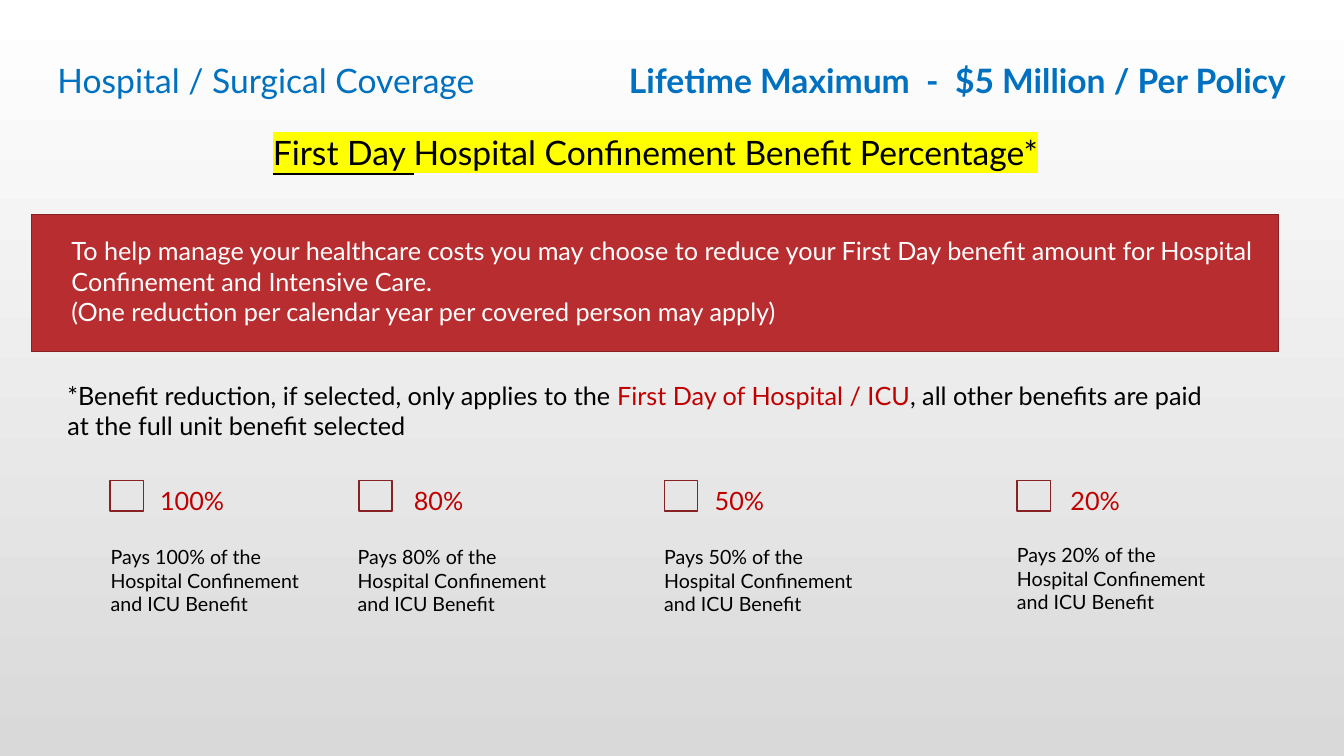
from dataclasses import dataclass
from typing import Any

import lxml.etree
import pptx
import pptx.dml.color
import pptx.enum.shapes
import pptx.enum.text
import pptx.oxml.ns
import pptx.util

RGB = pptx.dml.color.RGBColor.from_string
ALIGN = pptx.enum.text.PP_ALIGN


@dataclass(frozen=True)
class Theme:
    font: str = "Lato"
    heading_size: int = 24
    body_size: int = 18
    caption_size: int = 14
    blue: str = "0070C0"
    black: str = "000000"
    white: str = "FFFFFF"
    red: str = "C00000"
    banner: str = "B82D2F"
    outline: str = "882123"
    marker: str = "FFFF00"
    shade: str = "D9D9D9"


@dataclass(frozen=True)
class Grid:
    width: int = pptx.util.Inches(13.33)
    height: int = pptx.util.Inches(7.5)
    divisions: int = 100

    def columns(self, count: float) -> int:
        return round(self.width * count / self.divisions)

    def rows(self, count: float) -> int:
        return round(self.height * count / self.divisions)


@dataclass(frozen=True)
class Box:
    column: float
    row: float
    columns: float
    rows: float

    def place(self) -> tuple[int, int, int, int]:
        return (GRID.columns(self.column), GRID.rows(self.row),
                GRID.columns(self.columns), GRID.rows(self.rows))


@dataclass(frozen=True)
class Piece:
    text: str
    color: str
    bold: bool = False
    underline: bool = False
    highlight: str = ""


@dataclass(frozen=True)
class TextBlock:
    box: Box
    paragraphs: list[list[Piece]]
    size: int
    alignment: Any = ALIGN.LEFT
    wrap: bool = True
    indent: float = 0
    right_tab: float = 0


@dataclass(frozen=True)
class Option:
    percent: str
    checkbox_column: float
    label_column: float
    label_columns: float
    caption_column: float
    caption_row: float = 71.47


THEME = Theme()
GRID = Grid()
OPTIONS = [
    Option("100%", 8.18, 9.3, 9.98, 7.5),
    Option("80%", 26.7, 29.18, 6.9, 25.88),
    Option("50%", 49.43, 52.43, 5.18, 48.68),
    Option("20%", 75.68, 78.9, 5.18, 74.93, 71.2),
]


def apply_format(target: Any, values: dict[str, Any]) -> None:
    for name, value in values.items():
        setattr(target, name, value)


def add_element(parent: Any, tag: str, **attributes: str) -> Any:
    return lxml.etree.SubElement(parent, pptx.oxml.ns.qn(tag), **attributes)


def add_piece(paragraph: Any, piece: Piece, size: int) -> None:
    run = paragraph.add_run()
    run.text = piece.text
    apply_format(run.font, {"name": THEME.font, "size": pptx.util.Pt(size),
                            "bold": piece.bold, "underline": piece.underline})
    run.font.color.rgb = RGB(piece.color)
    if piece.highlight:
        properties = run.font._element
        highlight = add_element(properties, "a:highlight")
        add_element(highlight, "a:srgbClr", val=piece.highlight)
        properties.find(pptx.oxml.ns.qn("a:latin")).addprevious(highlight)


def add_text(slide: Any, block: TextBlock) -> None:
    frame = slide.shapes.add_textbox(*block.box.place()).text_frame
    apply_format(frame, {"word_wrap": block.wrap,
                         "auto_size": pptx.enum.text.MSO_AUTO_SIZE.SHAPE_TO_FIT_TEXT})
    if block.indent:
        frame.margin_left = GRID.columns(block.indent)
    for index, pieces in enumerate(block.paragraphs):
        paragraph = frame.add_paragraph() if index else frame.paragraphs[0]
        paragraph.alignment = block.alignment
        if block.right_tab:
            tabs = add_element(paragraph._p.get_or_add_pPr(), "a:tabLst")
            add_element(tabs, "a:tab", pos=str(GRID.columns(block.right_tab)), algn="r")
        for piece in pieces:
            add_piece(paragraph, piece, block.size)


def add_rectangle(slide: Any, box: Box, fill: str = "") -> None:
    shape = slide.shapes.add_shape(pptx.enum.shapes.MSO_SHAPE.RECTANGLE, *box.place())
    shape.shadow.inherit = False
    if fill:
        shape.fill.solid()
        shape.fill.fore_color.rgb = RGB(fill)
    else:
        shape.fill.background()
    shape.line.color.rgb = RGB(THEME.outline)
    shape.line.width = pptx.util.Pt(1)


def add_option(slide: Any, option: Option) -> None:
    add_rectangle(slide, Box(option.checkbox_column, 63.6, 2.48, 4))
    add_text(slide, TextBlock(
        Box(option.label_column, 63.6, option.label_columns, 5.33),
        [[Piece(option.percent, THEME.red)]], THEME.body_size, ALIGN.CENTER, wrap=False))
    caption = f"Pays {option.percent} of the Hospital Confinement and ICU Benefit"
    add_text(slide, TextBlock(
        Box(option.caption_column, option.caption_row, 15.6, 10.8),
        [[Piece(caption, THEME.black)]], THEME.caption_size))


def paint_background(slide: Any) -> None:
    fill = slide.background.fill
    fill.gradient()
    fill.gradient_angle = 90
    for stop, color, position in zip(fill.gradient_stops, (THEME.shade, THEME.white), (0, 1)):
        stop.color.rgb = RGB(color)
        stop.position = position


def main() -> None:
    presentation = pptx.Presentation()
    apply_format(presentation, {"slide_width": GRID.width, "slide_height": GRID.height})
    slide = presentation.slides.add_slide(presentation.slide_layouts[6])
    paint_background(slide)

    add_text(slide, TextBlock(
        Box(3.08, 7.2, 93.85, 6.67),
        [[Piece("Hospital / Surgical Coverage\t", THEME.blue),
          Piece("Lifetime Maximum  -  $5 Million / Per Policy", THEME.blue, bold=True)]],
        THEME.heading_size, indent=1.2, right_tab=91.4))
    add_text(slide, TextBlock(
        Box(5.93, 16.8, 85.67, 6.67),
        [[Piece("First Day ", THEME.black, underline=True, highlight=THEME.marker),
          Piece("Hospital Confinement Benefit Percentage*", THEME.black,
                highlight=THEME.marker)]],
        THEME.heading_size, ALIGN.CENTER))

    add_rectangle(slide, Box(2.33, 28.4, 92.8, 18.13), THEME.banner)
    add_text(slide, TextBlock(
        Box(4.58, 30.53, 90.7, 13.47),
        [[Piece("To help manage your healthcare costs you may choose to reduce your First Day "
                "benefit amount for Hospital Confinement and Intensive Care.", THEME.white)],
         [Piece("(One reduction per calendar year per covered person may apply)", THEME.white)]],
        THEME.body_size))
    add_text(slide, TextBlock(
        Box(4.28, 49.6, 86.27, 9.47),
        [[Piece("*Benefit reduction, if selected, only applies to the ", THEME.black),
          Piece("First Day of Hospital / ICU", THEME.red),
          Piece(", all other benefits are paid at the full unit benefit selected", THEME.black)]],
        THEME.body_size))
    for option in OPTIONS:
        add_option(slide, option)

    presentation.save("out.pptx")


if __name__ == "__main__":
    main()
